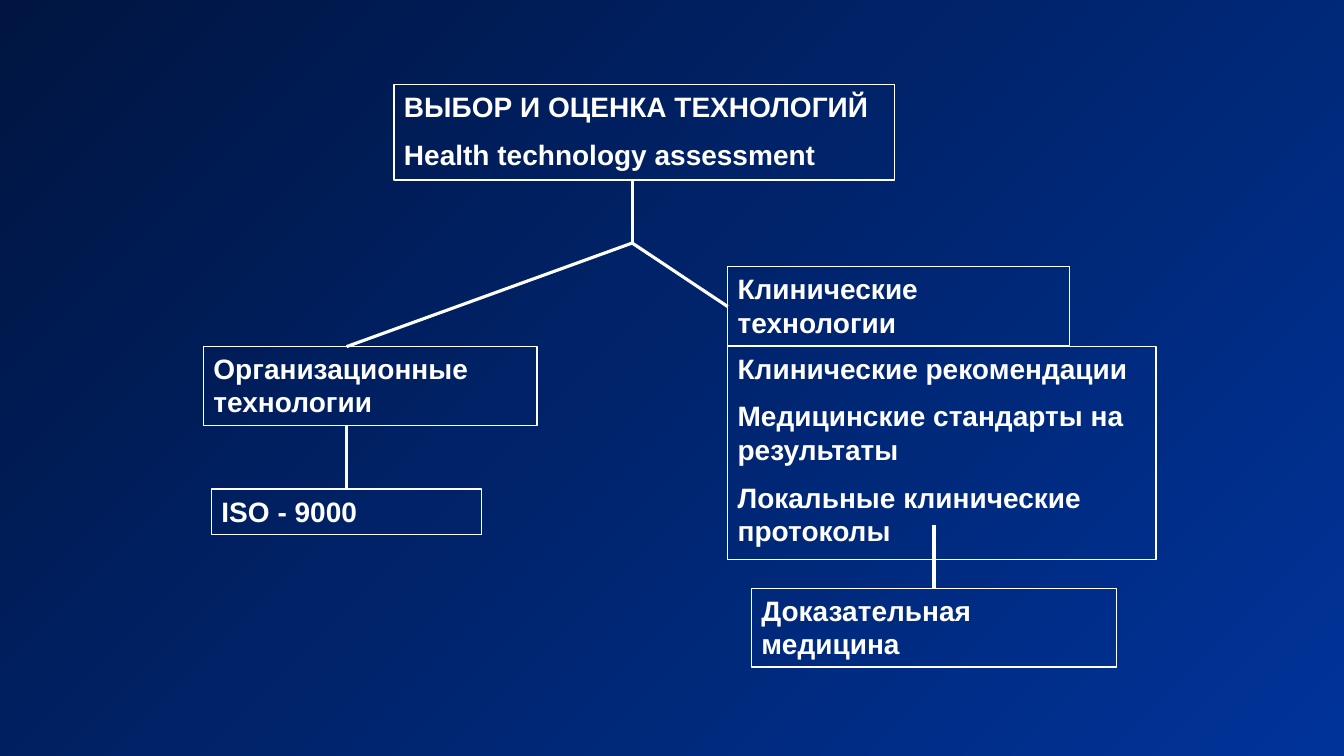
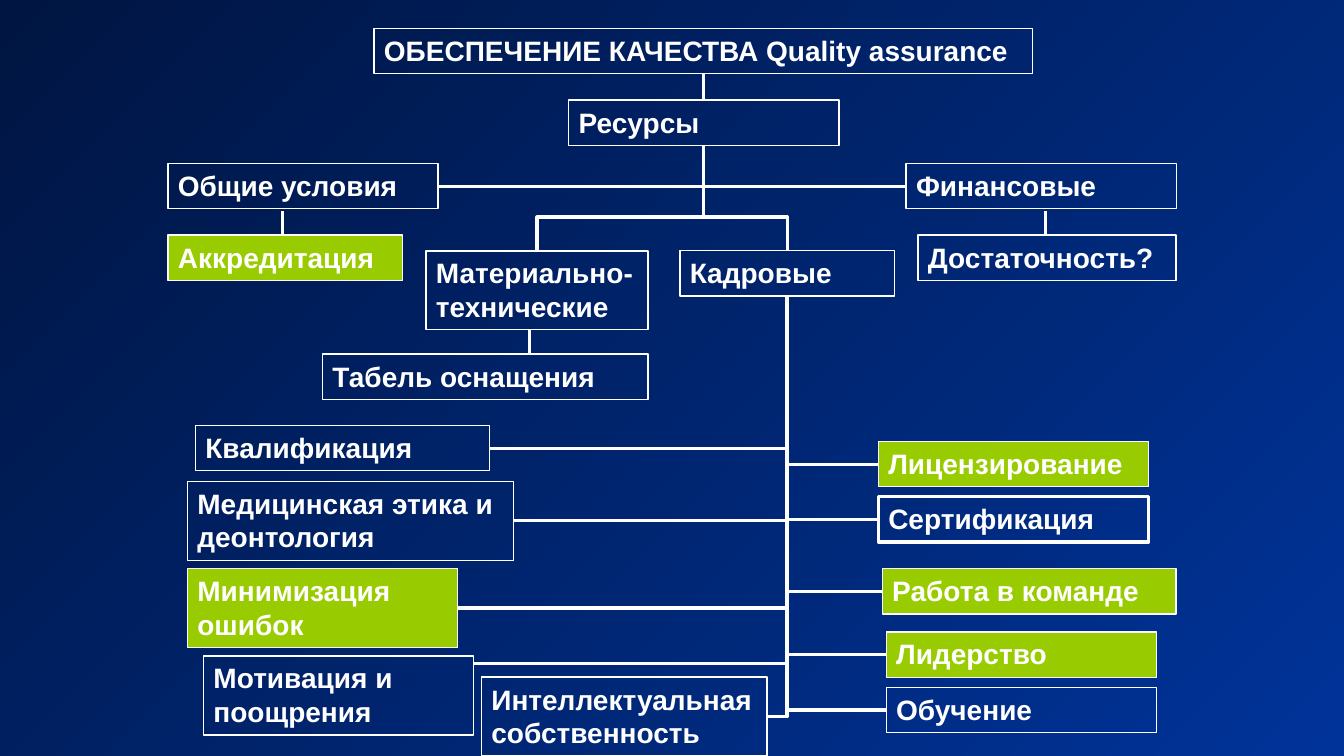
from lxml import etree
from pptx import Presentation
from pptx.dml.color import RGBColor
from pptx.enum import shapes, text
from pptx.oxml.ns import qn
from pptx.util import Pt

WHITE, GREEN = "FFFFFF", "99CC00"
GRADIENT = ("001541", "003399")
FONT = {"name": "Arial", "size": Pt(20), "bold": True}
THIN, THICK = 1, 2.25
LINE_HEIGHT, BOX_PADDING, PARA_GAP = 24, 8.4, 12

# Boxes: paragraphs, left, top, width, number of text lines, style
CHOICE_BOXES = [
    (["ВЫБОР И ОЦЕНКА ТЕХНОЛОГИЙ", "Health technology assessment"], 281.5, 60.3, 357.5, 2, {}),
    (["Организационные технологии"], 145.4, 247.4, 238.3, 2, {}),
    (["Клинические технологии"], 519.8, 190.6, 244, 2, {}),
    (["Клинические рекомендации", "Медицинские стандарты на результаты",
      "Локальные клинические протоколы"], 519.8, 247.4, 306, 5, {}),
    (["Доказательная медицина"], 536.7, 420.2, 260.8, 2, {}),
    (["ISO - 9000"], 151.1, 349.3, 193, 1, {}),
]
# Straight lines: from x, from y, to x, to y
CHOICE_LINES = [
    (451.6, 128.5, 451.6, 173.6),
    (451.6, 173.6, 519.8, 219),
    (451.6, 173.6, 247.6, 247.6),
    (247.6, 304, 247.6, 349.3),
    (667.2, 375, 667.2, 420.3),
]

QUALITY_BOXES = [
    (["ОБЕСПЕЧЕНИЕ КАЧЕСТВА Quality assurance"], 267.2, 20.2, 470.2, 1, {}),
    (["Общие условия"], 120, 116.7, 193, 1, {}),
    (["Ресурсы"], 406.2, 71.5, 193, 1, {}),
    (["Финансовые"], 647.2, 116.7, 193, 1, {}),
    (["Достаточность?"], 655.7, 167.9, 184.4, 1, {}),
    (["Кадровые"], 485.6, 179.1, 153.2, 1, {}),
    (["Материально-технические"], 304.3, 179.2, 158.6, 2, {}),
    (["Аккредитация"], 120, 167.9, 167.4, 1, {"fill": GREEN}),
    (["Табель оснащения"], 230.4, 252.9, 232.5, 1, {}),
    (["Квалификация"], 139.6, 303.9, 210, 1, {}),
    (["Медицинская этика и деонтология"], 133.9, 343.8, 232.8, 2, {}),
    (["Минимизация ошибок"], 133.9, 406.1, 193, 2, {"fill": GREEN}),
    (["Мотивация и поощрения"], 145.4, 468.5, 193, 2, {}),
    (["Лицензирование"], 627.4, 315.3, 193, 1, {"fill": GREEN}),
    (["Сертификация"], 627.4, 354.8, 193, 1, {"weight": THICK}),
    (["Работа в команде"], 630.2, 406.1, 210, 1, {"fill": GREEN}),
    (["Лидерство"], 633, 451.4, 193, 1, {"fill": GREEN}),
    (["Обучение"], 633, 491, 193, 1, {}),
    (["Интеллектуальная собственность"], 343.9, 483.7, 204, 2, {}),
]
RESOURCES, STAFF = (502.6, 103.8), (562.2, 211.6)
QUALITY_LINES = [
    (502.6, 52.6, 502.6, 71.4),
    (378, 236, 378, 252.8),
    (202.1, 151, 202.1, 168),
    (746.6, 151, 746.6, 168),
    (562.2, 474.2, 338.4, 474.2),
]
# Bent twice: start, end, share of the drop before the first bend
FORKS = [
    (RESOURCES, (383.6, 179.2), 0.68),
    (RESOURCES, (562.2, 179.2), 0.68),
]
# Bent once: start of the trunk, boxes reached at mid-height
BRANCHES = {
    RESOURCES: ["Общие условия", "Финансовые"],
    STAFF: ["Квалификация", "Медицинская этика и деонтология", "Минимизация ошибок",
            "Интеллектуальная собственность", "Лицензирование", "Сертификация",
            "Работа в команде", "Лидерство", "Обучение"],
}


def color(value):
    return RGBColor.from_string(value)


def box_height(paragraphs, lines):
    return BOX_PADDING + lines * LINE_HEIGHT + (len(paragraphs) - 1) * PARA_GAP


def add_page(deck):
    page = deck.slides.add_slide(deck.slide_layouts[6])
    fill = page.background.fill
    fill.gradient()
    fill.gradient_angle = 315
    for stop, value in zip(fill.gradient_stops, GRADIENT):
        stop.color.rgb = color(value)
    return page


def add_box(page, paragraphs, left, top, width, lines, style):
    height = box_height(paragraphs, lines)
    box = page.shapes.add_textbox(Pt(left), Pt(top), Pt(width), Pt(height))
    box.line.color.rgb = color(WHITE)
    box.line.width = Pt(style.get("weight", THIN))
    if "fill" in style:
        box.fill.solid()
        box.fill.fore_color.rgb = color(style["fill"])
    frame = box.text_frame
    frame.word_wrap = True
    frame.auto_size = text.MSO_AUTO_SIZE.SHAPE_TO_FIT_TEXT
    for index, words in enumerate(paragraphs):
        para = frame.add_paragraph() if index else frame.paragraphs[0]
        para.space_before = Pt(10 if index else 0)
        span = para.add_run()
        span.text = words
        for name, value in FONT.items():
            setattr(span.font, name, value)
        span.font.color.rgb = color(WHITE)


def add_line(page, *ends, kind=shapes.MSO_CONNECTOR.STRAIGHT):
    line = page.shapes.add_connector(kind, *map(Pt, ends))
    line.line.color.rgb = color(WHITE)
    line.line.width = Pt(THICK)
    etree.SubElement(line._element.spPr, qn("a:effectLst"))
    return line


def add_elbow(page, start, end, bend=None):
    """Connector that leaves its start downwards: a preset turned by a quarter."""
    (x1, y1), (x2, y2) = start, end
    drop, reach = y2 - y1, abs(x2 - x1)
    left, top = (x1 + x2 - drop) / 2, (y1 + y2 - reach) / 2
    line = add_line(page, left, top, left + drop, top + reach,
                    kind=shapes.MSO_CONNECTOR.ELBOW)
    properties = line._element.spPr
    turn = properties.find(qn("a:xfrm"))
    if x2 < x1:
        turn.set("rot", "5400000")
    else:
        turn.set("rot", "16200000")
        turn.set("flipH", "1")
    preset = properties.find(qn("a:prstGeom"))
    if bend is None:
        preset.set("prst", "bentConnector2")
    else:
        guides = preset.find(qn("a:avLst"))
        if guides is None:
            guides = etree.SubElement(preset, qn("a:avLst"))
        etree.SubElement(guides, qn("a:gd"), name="adj1", fmla=f"val {round(bend * 100000)}")


def branch_elbows(boxes, branches):
    places = {box[0][0]: box for box in boxes}
    for start, names in branches.items():
        for name in names:
            paragraphs, left, top, width, lines, _ = places[name]
            edge = left if left > start[0] else left + width
            yield start, (edge, top + box_height(paragraphs, lines) / 2)


def main():
    deck = Presentation()
    deck.slide_width, deck.slide_height = Pt(960), Pt(540)
    diagrams = [
        (CHOICE_BOXES, CHOICE_LINES, [], {}),
        (QUALITY_BOXES, QUALITY_LINES, FORKS, BRANCHES),
    ]
    for boxes, lines, forks, branches in diagrams:
        page = add_page(deck)
        for box in boxes:
            add_box(page, *box)
        for ends in lines:
            add_line(page, *ends)
        for elbow in [*forks, *branch_elbows(boxes, branches)]:
            add_elbow(page, *elbow)
    deck.save("out.pptx")


if __name__ == "__main__":
    main()
